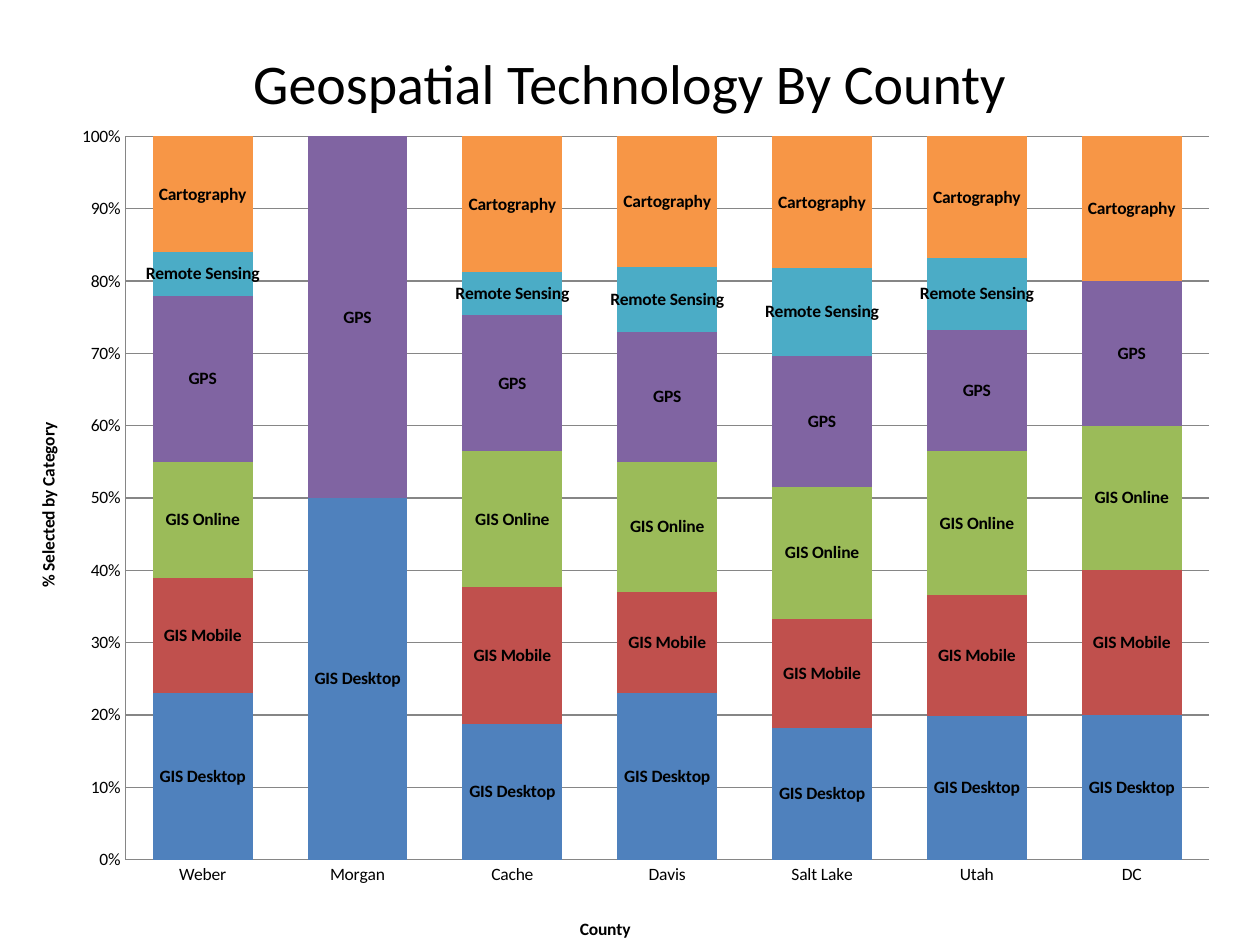
"""Build a slide with a 100% stacked column chart of geospatial technology by county."""
from lxml import etree
from pptx import Presentation
from pptx import util as u
from pptx.chart.data import CategoryChartData
from pptx.dml.color import RGBColor
from pptx.enum import chart as charts, text
from pptx.oxml import ns

BLACK = RGBColor(0, 0, 0)
GRAY = RGBColor(0x86, 0x86, 0x86)
FONT = "Calibri"

TITLE = "Geospatial Technology By County"
COUNTIES = ["Weber", "Morgan", "Cache", "Davis", "Salt Lake", "Utah", "DC"]
TECHNOLOGIES = [
    ("GIS Desktop", [23, 50, 19, 23, 18, 20, 20], RGBColor(0x4F, 0x81, 0xBD)),
    ("GIS Mobile", [16, 0, 19, 14, 15, 17, 20], RGBColor(0xC0, 0x50, 0x4D)),
    ("GIS Online", [16, 0, 19, 18, 18, 20, 20], RGBColor(0x9B, 0xBB, 0x59)),
    ("GPS", [23, 50, 19, 18, 18, 17, 20], RGBColor(0x80, 0x64, 0xA2)),
    ("Remote Sensing", [6, 0, 6, 9, 12, 10, 0], RGBColor(0x4B, 0xAC, 0xC6)),
    ("Cartography", [16, 0, 19, 18, 18, 17, 20], RGBColor(0xF7, 0x96, 0x46)),
]
TITLE_BOX = (36, 21.6, 648, 50.4)
CHART_BOX = (12.24, 66.24, 689.76, 473.76)
PLOT_LAYOUT = {"layoutTarget": "inner", "xMode": "edge", "yMode": "edge",
               "x": 0.086, "y": 0.025, "w": 0.898, "h": 0.878}


def format_font(font, size=10, bold=False, color=BLACK):
    font.name, font.size, font.bold = FONT, u.Pt(size), bold
    font.color.rgb = color


def write_text(frame, content, align=text.PP_ALIGN.CENTER, **style):
    paragraph = frame.paragraphs[0]
    paragraph.alignment = align
    run = paragraph.add_run()
    run.text = content
    format_font(run.font, **style)


def add_value(parent, tag, value=None):
    element = etree.SubElement(parent, ns.qn(f"c:{tag}"))
    if value is not None:
        element.set("val", str(value))
    return element


def set_layout(element, index, settings):
    for old in element.findall(ns.qn("c:layout")):
        element.remove(old)
    layout = add_value(element, "layout")
    manual = add_value(layout, "manualLayout")
    for tag, value in settings.items():
        add_value(manual, tag, value)
    element.insert(index, layout)


def hide_zero_labels(labels, values):
    zeros = [index for index, value in enumerate(values) if value == 0]
    for position, index in enumerate(zeros):
        label = add_value(labels, "dLbl")
        add_value(label, "idx", index)
        add_value(label, "delete", 1)
        labels.insert(position, label)


def format_axis(axis, name, x, y):
    write_text(axis.axis_title.text_frame, name, bold=True)
    title = axis.axis_title.format.line and axis._element.find(ns.qn("c:title"))
    for properties in title.findall(ns.qn("c:spPr")):
        title.remove(properties)
    set_layout(title, 1, {"xMode": "edge", "yMode": "edge", "x": x, "y": y})
    axis.major_tick_mark = axis.minor_tick_mark = charts.XL_TICK_MARK.NONE
    axis.format.line.color.rgb = GRAY
    format_font(axis.tick_labels.font)


def add_technology_chart(slide):
    data = CategoryChartData()
    data.categories = COUNTIES
    for name, values, _ in TECHNOLOGIES:
        data.add_series(name, values)
    chart = slide.shapes.add_chart(
        charts.XL_CHART_TYPE.COLUMN_STACKED_100, *map(u.Pt, CHART_BOX), data).chart
    chart.has_legend = chart.has_title = False
    format_font(chart.font)
    plot = chart.plots[0]
    plot.gap_width, plot.overlap, plot.vary_by_categories = 55, 100, False
    for series, (_, values, color) in zip(plot.series, TECHNOLOGIES):
        series.format.fill.solid()
        series.format.fill.fore_color.rgb = color
        labels = series.data_labels
        labels.show_series_name, labels.show_value = True, False
        format_font(labels.font, bold=True)
        hide_zero_labels(labels._element, values)
    format_axis(chart.category_axis, "County", 0.46, 0.97)
    value_axis = chart.value_axis
    format_axis(value_axis, "% Selected by Category", 0.01, 0.37)
    value_axis.minimum_scale, value_axis.maximum_scale, value_axis.major_unit = 0, 1, 0.1
    value_axis.tick_labels.number_format = "0%"
    value_axis.tick_labels.number_format_is_linked = False
    value_axis.major_gridlines.format.line.color.rgb = GRAY
    set_layout(chart._chartSpace.chart.plotArea, 0, PLOT_LAYOUT)


def main():
    presentation = Presentation()
    presentation.slide_width, presentation.slide_height = u.Pt(720), u.Pt(540)
    slide = presentation.slides.add_slide(presentation.slide_layouts[5])
    title = slide.shapes.title
    title.left, title.top, title.width, title.height = map(u.Pt, TITLE_BOX)
    title.text_frame.vertical_anchor = text.MSO_ANCHOR.MIDDLE
    write_text(title.text_frame, TITLE, size=32)
    add_technology_chart(slide)
    presentation.save("out.pptx")


if __name__ == "__main__":
    main()
